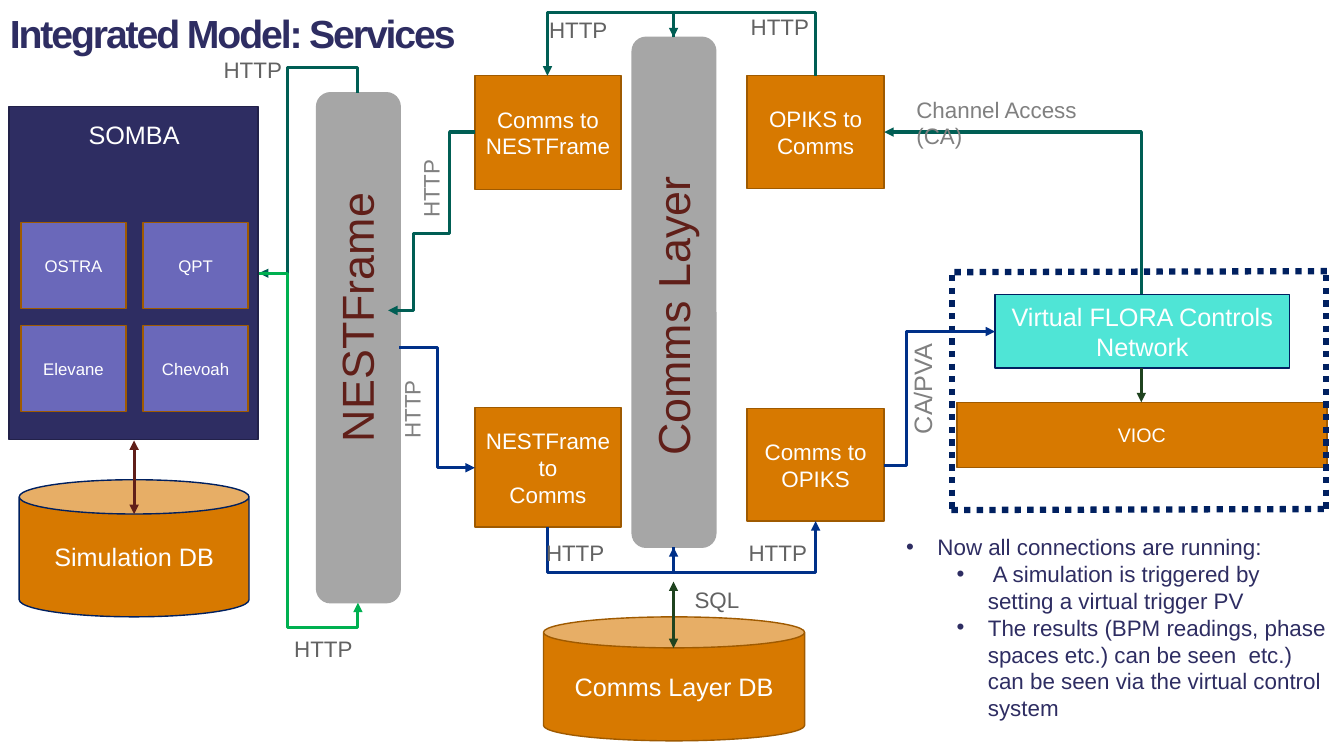
from lxml import etree
from pptx import Presentation
from pptx.dml.color import RGBColor
from pptx.enum.dml import MSO_LINE
from pptx.enum.shapes import MSO_CONNECTOR, MSO_SHAPE
from pptx.enum.text import MSO_ANCHOR, MSO_AUTO_SIZE, PP_ALIGN
from pptx.oxml.ns import qn
from pptx.util import Inches, Pt

RECT, ROUNDED, CAN = MSO_SHAPE.RECTANGLE, MSO_SHAPE.ROUNDED_RECTANGLE, MSO_SHAPE.CAN
STRAIGHT, ELBOW = MSO_CONNECTOR.STRAIGHT, MSO_CONNECTOR.ELBOW
LEFT, CENTER = PP_ALIGN.LEFT, PP_ALIGN.CENTER
MIDDLE, GROW, DOTTED = MSO_ANCHOR.MIDDLE, MSO_AUTO_SIZE.SHAPE_TO_FIT_TEXT, MSO_LINE.ROUND_DOT

# The slide is a grid of square cells
COLS, ROWS, CELL = 133.3, 75, 0.1
FONT = "Arial"
COLORS = {
    "white": "FFFFFF", "navy": "2E2D62", "navy_edge": "222149", "violet": "6A68BA",
    "orange": "D77900", "orange_edge": "9F5A00", "turquoise": "4FE5D6", "frame": "002060",
    "silver": "A6A6A6", "maroon": "601F19", "label": "626262", "pale_label": "808080",
    "teal": "005E54", "blue": "003088", "green": "00B050", "forest": "1F431F",
}


def cells(n):
    return Inches(n * CELL)


def rgb(name):
    return RGBColor.from_string(COLORS[name])


def write(p, text, size=16, color="white", align=LEFT, bold=False, spacing=None):
    p.text = text
    p.alignment = align
    for r in p.runs:
        r.font.name, r.font.size, r.font.bold = FONT, Pt(size), bold
        r.font.color.rgb = rgb(color)
        if spacing is not None:
            r.font._element.set("spc", str(int(spacing * 100)))


class Board:
    """Holds the slide and its style; all lengths are grid cells."""

    def __init__(self, prs):
        self.slide = prs.slides.add_slide(prs.slide_layouts[6])
        self.shapes = self.slide.shapes

    def box(self, col, row, w, h, text="", kind=RECT, fill="orange",
            edge="orange_edge", **fmt):
        sp = self.shapes.add_shape(kind, *map(cells, (col, row, w, h)))
        sp.shadow.inherit = False
        sp.fill.solid()
        sp.fill.fore_color.rgb = rgb(fill)
        sp.line.color.rgb = rgb(edge)
        sp.line.width = Pt(1)
        if text:
            tf = sp.text_frame
            tf.word_wrap, tf.vertical_anchor = True, MIDDLE
            write(tf.paragraphs[0], text, align=CENTER, **fmt)

    def label(self, col, row, w, h, text, rotation=0, wrap=True, **fmt):
        sp = self.shapes.add_textbox(*map(cells, (col, row, w, h)))
        sp.rotation = rotation
        tf = sp.text_frame
        tf.word_wrap, tf.auto_size = wrap, GROW
        write(tf.paragraphs[0], text, **{"color": "label", **fmt})
        return tf

    def bullets(self, col, row, w, h, items):
        tf = self.label(col, row, w, h, "")
        for i, (level, text) in enumerate(items):
            p = tf.add_paragraph() if i else tf.paragraphs[0]
            write(p, text, color="navy")
            p.level = level
            pPr = p._p.get_or_add_pPr()
            pPr.set("marL", str(Inches(0.31 + 0.5 * level)))
            pPr.set("indent", str(Inches(-0.31)))
            etree.SubElement(pPr, qn("a:buFont")).set("typeface", FONT)
            etree.SubElement(pPr, qn("a:buChar")).set("char", "•")

    def style_line(self, cxn, color, width, ends):
        cxn.line.color.rgb = rgb(color)
        cxn.line.width = Pt(width)
        ln = cxn.line._get_or_add_ln()
        for end in ends:
            etree.SubElement(ln, qn(f"a:{end}End")).set("type", "triangle")
        etree.SubElement(cxn._element.spPr, qn("a:effectLst"))

    def line(self, start, stop, color, width=2.25, ends=("tail",), dash=None):
        cxn = self.shapes.add_connector(STRAIGHT, *map(cells, (*start, *stop)))
        if dash:
            cxn.line.dash_style = dash
        self.style_line(cxn, color, width, ends)

    def route(self, color, *points):
        """Elbow arrow through the given points, with right-angled turns."""
        (x1, y1), (x2, y2) = points[0], points[-1]
        dx, dy = x2 - x1, y2 - y1
        upright = points[1][0] == x1
        # An upright start is a sideways elbow turned by 270 degrees
        u, v = (-dy, dx) if upright else (dx, dy)
        cx, cy = (x1 + x2) / 2, (y1 + y2) / 2
        ends = (cx - u / 2, cy - v / 2, cx + u / 2, cy + v / 2)
        cxn = self.shapes.add_connector(ELBOW, *map(cells, ends))
        spPr = cxn._element.spPr
        if upright:
            spPr.find(qn("a:xfrm")).set("rot", str(270 * 60000))
        geom = spPr.find(qn("a:prstGeom"))
        geom.set("prst", f"bentConnector{len(points) - 1}")
        guides = geom.find(qn("a:avLst"))
        if guides is None:
            guides = etree.SubElement(geom, qn("a:avLst"))
        for i, (x, y) in enumerate(points[1:-2], 1):
            along_y = upright == (i % 2 == 1)
            share = (y - y1) / dy if along_y else (x - x1) / dx
            gd = etree.SubElement(guides, qn("a:gd"))
            gd.set("name", f"adj{i}")
            gd.set("fmla", f"val {round(share * 100000)}")
        self.style_line(cxn, color, 2.25, ("tail",))


def main():
    prs = Presentation()
    prs.slide_width, prs.slide_height = cells(COLS), cells(ROWS)
    b = Board(prs)
    both = ("head", "tail")

    # Title
    b.label(0, 0.4, 71.4, 5.7, "Integrated Model: Services", size=28, color="navy",
            bold=True, spacing=-1.5)

    # Virtual controls in a dotted frame
    b.box(98.7, 29.2, 29.2, 7.3, "Virtual FLORA Controls Network", fill="turquoise",
          edge="frame", size=18)
    b.box(94.9, 39.9, 36.7, 6.5, "VIOC", size=14)
    for start, stop in (((94.4, 27.3), (94.4, 50.6)), ((131.5, 27.3), (131.5, 50.5)),
                        ((131.3, 50.5), (94, 50.6)), ((131.6, 26.9), (94.4, 27))):
        b.line(start, stop, "frame", 4.5, ends=(), dash=DOTTED)

    # Translators around the communication layer
    b.box(47.1, 7.5, 14.5, 11.3, "Comms to NESTFrame")
    b.box(47.1, 40.4, 14.5, 11.9, "NESTFrame to\nComms")
    b.box(74.1, 40.5, 13.6, 11.2, "Comms to OPIKS")
    b.box(74.1, 7.5, 13.6, 11.2, "OPIKS to Comms")
    b.box(62.7, 3.7, 8.3, 50.6, kind=ROUNDED, fill="silver", edge="silver")
    b.label(49.8, 26.1, 33.8, 6.4, "Comms Layer", rotation=270, size=32, color="maroon")
    b.route("teal", (80.9, 7.5), (80.9, 1.2), (66.8, 1.2), (66.8, 3.7))
    b.route("teal", (66.8, 3.7), (66.8, 1.2), (54.3, 1.2), (54.3, 7.5))
    b.route("blue", (54.3, 52.3), (54.3, 56.8), (66.8, 56.8), (66.8, 54.3))
    b.route("blue", (66.8, 54.3), (66.8, 56.8), (80.9, 56.8), (80.9, 51.7))

    # Communication layer database
    b.box(53.9, 61.2, 25.9, 12.3, "Comms Layer DB", kind=CAN, size=18)
    b.line((66.8, 57.7), (66.8, 64.3), "forest", ends=both)
    b.label(67.9, 57.7, 14.9, 3.7, "SQL")
    for col, row in ((68.3, 53), (48.2, 53), (68.5, 0.8), (48.5, 1.1)):
        b.label(col, row, 17.7, 3.7, "HTTP", align=CENTER)

    # Simulation codes and their database
    b.box(0.9, 10.6, 24.7, 33, fill="navy", edge="navy_edge")
    b.label(2.9, 11.3, 20.8, 4, "SOMBA", size=18, color="white", align=CENTER)
    for i, code in enumerate(("OSTRA", "QPT", "Elevane", "Chevoah")):
        b.box(2.1 + 12.1 * (i % 2), 22.1 + 10.2 * (i // 2), 10.4, 8.5, code,
              fill="violet", size=12)
    b.box(1.9, 47.6, 22.8, 13.6, "Simulation DB", kind=CAN, edge="frame", size=18)

    # Frame layer
    b.box(31.4, 9.2, 8.3, 50.6, kind=ROUNDED, fill="silver", edge="silver")
    b.label(21.2, 27.6, 28.2, 6.3, "NESTFrame", rotation=270, size=32, color="maroon")
    b.label(28.2, 62.5, 8, 3.7, "HTTP")
    b.line((13.3, 43.7), (13.3, 51), "maroon", ends=both)
    b.route("teal", (35.5, 9.2), (35.5, 6.7), (28.5, 6.7), (28.5, 27.1), (25.7, 27.1))
    b.route("green", (25.7, 27.1), (28.5, 27.1), (28.5, 62.3), (35.5, 62.3), (35.5, 59.8))
    b.label(21.2, 5.1, 8, 3.7, "HTTP")

    # Links to the virtual controls
    b.line((113.2, 36.5), (113.2, 39.9), "forest")
    b.route("teal", (113.2, 29.2), (113.2, 13.1), (87.7, 13.1))
    b.route("blue", (87.7, 46.2), (89.9, 46.2), (89.9, 32.9), (98.7, 32.9))
    b.label(89.9, 9, 22.9, 6.4, "Channel Access (CA)", color="pale_label")
    b.label(82.2, 32.8, 18.5, 4, "CA/PVA", rotation=270, size=18, color="pale_label")

    # Links between the frame layer and the translators
    b.route("teal", (47.1, 13.1), (44.6, 13.1), (44.6, 23.2), (41, 23.2), (41, 30.8),
            (38.5, 30.8))
    b.route("blue", (39.6, 34.5), (43.4, 34.5), (43.4, 46.4), (47.1, 46.4))
    for col, row in ((38.8, 16.8), (36.9, 38.7)):
        b.label(col, row, 7.9, 3.7, "HTTP", rotation=270, wrap=False, color="pale_label")

    # Status notes
    b.bullets(88.9, 52.4, 44, 19.9, (
        (0, "Now all connections are running:"),
        (1, " A simulation is triggered by setting a virtual trigger PV"),
        (1, "The results (BPM readings, phase spaces etc.) can be seen  etc.) "
            "can be seen via the virtual control system"),
    ))

    prs.save("out.pptx")


if __name__ == "__main__":
    main()
